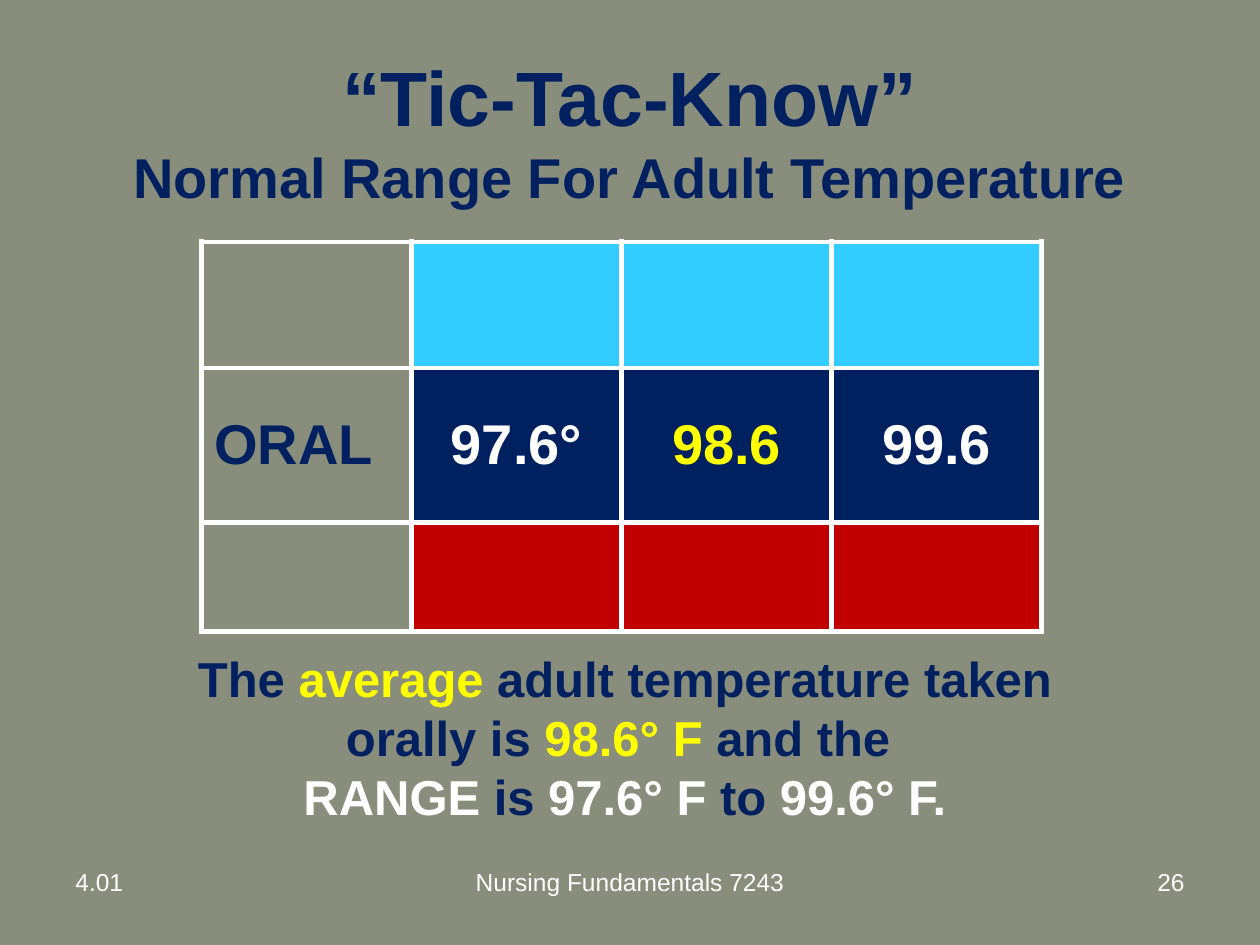
from lxml import etree
from pptx import Presentation
from pptx.dml.color import RGBColor
from pptx.enum.text import MSO_ANCHOR, PP_ALIGN
from pptx.oxml.ns import qn
from pptx.util import Pt

LEFT, MID, RIGHT = PP_ALIGN.LEFT, PP_ALIGN.CENTER, PP_ALIGN.RIGHT
TOP, CENTER = MSO_ANCHOR.TOP, MSO_ANCHOR.MIDDLE
SAGE = RGBColor(0x89, 0x8D, 0x7B)
NAVY = RGBColor(0x00, 0x20, 0x60)
SKY = RGBColor(0x33, 0xCC, 0xFF)
RED = RGBColor(0xC0, 0x00, 0x00)
YELLOW = RGBColor(0xFF, 0xFF, 0x00)
WHITE = RGBColor(0xFF, 0xFF, 0xFF)
FONT = "Arial"

# Content: paragraphs are lists of (text, size, colour)
TITLE = [
    [("“Tic-Tac-Know”", 44, NAVY)],
    [("Normal Range For Adult Temperature", 32, NAVY)],
]
NOTE = [
    [("The ", 28, NAVY), ("average", 28, YELLOW),
     (" adult temperature taken orally is ", 28, NAVY),
     ("98.6° F", 28, YELLOW), (" and the ", 28, NAVY)],
    [("RANGE", 28, WHITE), (" is ", 28, NAVY), ("97.6° F", 28, WHITE),
     (" to ", 28, NAVY), ("99.6° F.", 28, WHITE)],
]
# Rows: height, fill of the value cells, (text, colour) per cell
ROWS = [
    (72, SKY, [None] * 4),
    (88.5, NAVY, [("ORAL", NAVY), ("97.6°", WHITE),
                  ("98.6", YELLOW), ("99.6", WHITE)]),
    (62, RED, [None] * 4),
]
FOOTER = [
    ("4.01", 36, 168, LEFT),
    ("Nursing Fundamentals 7243", 246, 228, MID),
    ("26", 516, 168, RIGHT),
]
COL = 120
GRID = (115.2, 138.2)


def add_runs(para, runs, align, bold=True):
    para.alignment = align
    for text, size, color in runs:
        run = para.add_run()
        run.text = text
        font = run.font
        font.name, font.size, font.bold = FONT, Pt(size), bold
        font.color.rgb = color


def add_text(slide, box, paras, align, anchor=TOP, bold=True):
    frame = slide.shapes.add_textbox(*map(Pt, box)).text_frame
    frame.word_wrap = True
    frame.vertical_anchor = anchor
    for i, runs in enumerate(paras):
        para = frame.add_paragraph() if i else frame.paragraphs[0]
        add_runs(para, runs, align, bold)


def add_edges(cell, color, width):
    props = cell._tc.get_or_add_tcPr()
    for i, tag in enumerate(("a:lnL", "a:lnR", "a:lnT", "a:lnB")):
        line = etree.Element(qn(tag), w=str(Pt(width)))
        fill = etree.SubElement(line, qn("a:solidFill"))
        etree.SubElement(fill, qn("a:srgbClr"), val=str(color))
        props.insert(i, line)


def add_grid(slide):
    count = len(ROWS[0][2])
    size = (COL * count, sum(row[0] for row in ROWS))
    table = slide.shapes.add_table(
        len(ROWS), count, *map(Pt, GRID + size)).table
    table.first_row = table.horz_banding = False
    for col in table.columns:
        col.width = Pt(COL)
    for r, (height, color, items) in enumerate(ROWS):
        table.rows[r].height = Pt(height)
        for c, item in enumerate(items):
            cell = table.cell(r, c)
            cell.vertical_anchor = CENTER
            if c:
                cell.fill.solid()
                cell.fill.fore_color.rgb = color
            else:
                cell.fill.background()
            add_edges(cell, WHITE, 3)
            if item:
                text, ink = item
                add_runs(cell.text_frame.paragraphs[0], [(text, 32, ink)],
                         MID if c else LEFT)


def main():
    deck = Presentation()
    deck.slide_width, deck.slide_height = Pt(720), Pt(540)
    slide = deck.slides.add_slide(deck.slide_layouts[6])
    slide.background.fill.solid()
    slide.background.fill.fore_color.rgb = SAGE

    # Title, table and note
    add_text(slide, (36, 21.6, 648, 105), TITLE, MID, CENTER)
    add_grid(slide)
    add_text(slide, (90.7, 367.2, 532.8, 108.7), NOTE, MID)

    # Footer
    for text, left, width, align in FOOTER:
        add_text(slide, (left, 491.8, width, 37.4),
                 [[(text, 14, WHITE)]], align, bold=False)
    deck.save("out.pptx")


if __name__ == "__main__":
    main()
